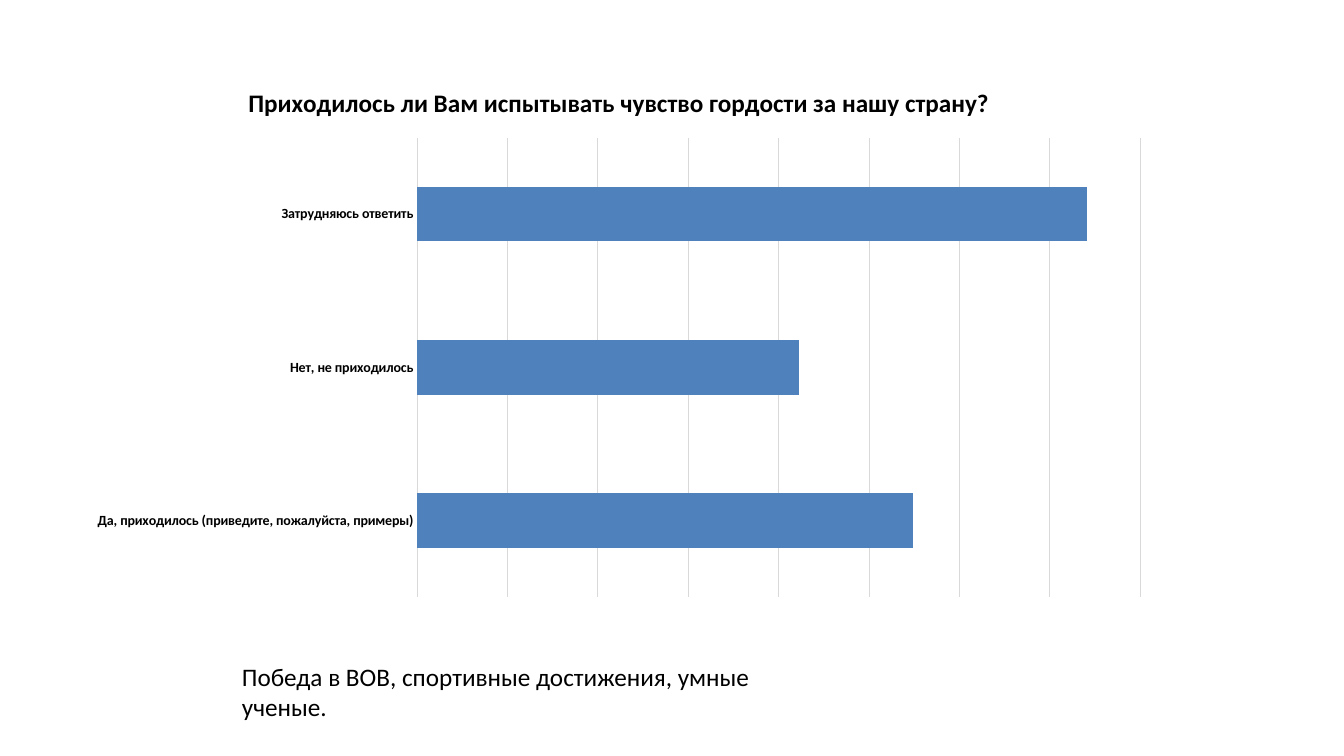
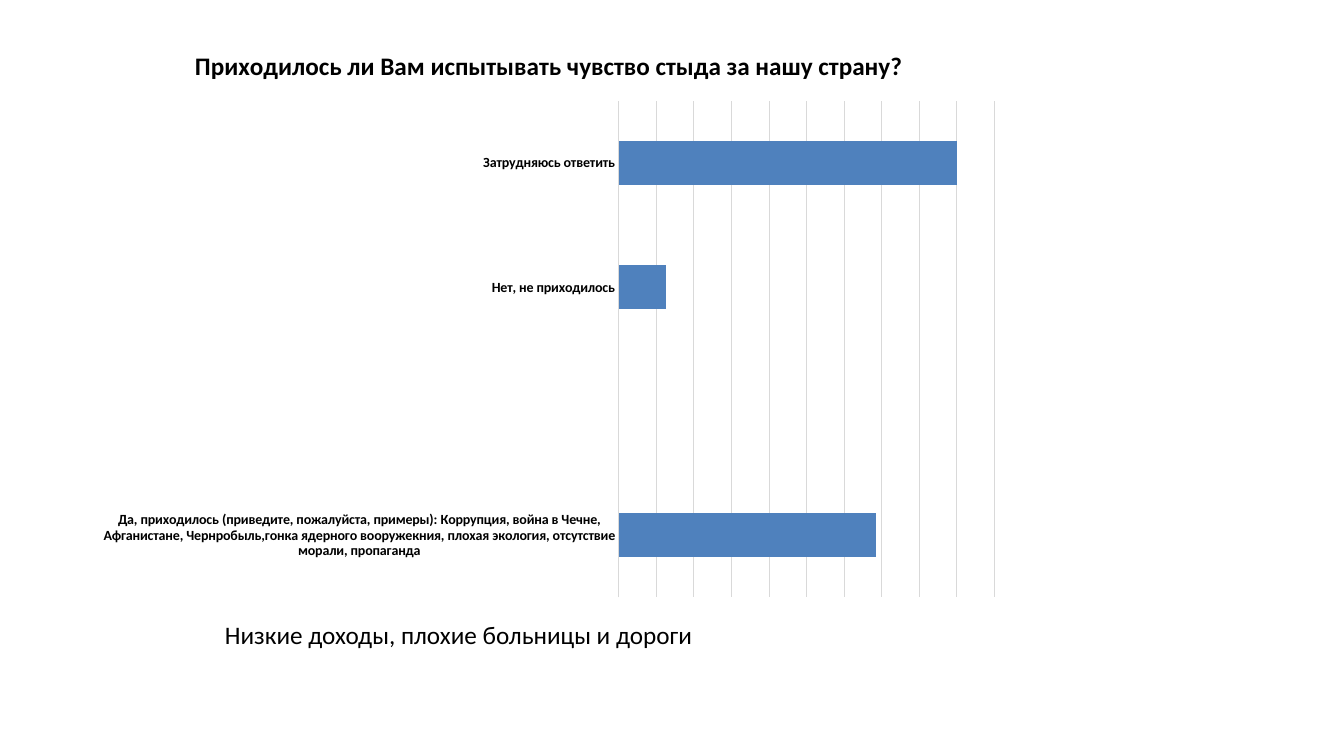
from dataclasses import dataclass

import pptx
import pptx.chart.data
import pptx.dml.color
import pptx.enum.chart
import pptx.enum.text
import pptx.util

EMU_PER_PX = 914400 / 100.8
FONT = "Calibri"
COLORS = {"text": "000000", "bar": "4F81BD", "grid": "D9D9D9"}


@dataclass(frozen=True)
class Box:
    left: int
    top: int
    width: int
    height: int

    def emu(self) -> tuple:
        return tuple(px(n) for n in (self.left, self.top, self.width, self.height))


@dataclass(frozen=True)
class Question:
    title: str
    answers: tuple
    axis_max: float
    axis_step: float
    chart_box: Box
    comment: str
    comment_box: Box


QUESTIONS = (
    Question(
        title="Приходилось ли Вам испытывать чувство гордости за нашу страну?",
        answers=(
            ("Да, приходилось (приведите, пожалуйста, примеры)", 74),
            ("Нет, не приходилось", 57),
            ("Затрудняюсь ответить", 100),
        ),
        axis_max=108,
        axis_step=13.5,
        chart_box=Box(76, 65, 1086, 543),
        comment="Победа в ВОВ, спортивные достижения, умные ученые.",
        comment_box=Box(232, 656, 602, 72),
    ),
    Question(
        title="Приходилось ли Вам испытывать чувство стыда за нашу страну?",
        answers=(
            ("Да, приходилось (приведите, пожалуйста, примеры): Коррупция, "
             "война в Чечне, Афганистане, Чернробыль,гонка ядерного "
             "вооружекния, плохая экология, отсутствие морали, пропаганда", 76),
            ("", None),
            ("Нет, не приходилось", 14),
            ("Затрудняюсь ответить", 100),
        ),
        axis_max=111.1,
        axis_step=11.11,
        chart_box=Box(85, 27, 928, 582),
        comment="Низкие доходы, плохие больницы и дороги",
        comment_box=Box(215, 614, 661, 40),
    ),
)


def px(length: int) -> int:
    return round(length * EMU_PER_PX)


def rgb(name: str) -> pptx.dml.color.RGBColor:
    return pptx.dml.color.RGBColor.from_string(COLORS[name])


def style_font(font, size: int, bold: bool = False) -> None:
    font.name = FONT
    font.size = pptx.util.Pt(size)
    font.bold = bold
    font.color.rgb = rgb("text")


def write_text(frame, text: str, *, size: int = 18, bold: bool = False) -> None:
    run = frame.paragraphs[0].add_run()
    run.text = text
    style_font(run.font, size, bold)


def style_line(line) -> None:
    line.color.rgb = rgb("grid")
    line.width = pptx.util.Pt(0.75)


def add_answers_chart(slide, question: Question) -> None:
    labels, shares = zip(*question.answers)
    answers = pptx.chart.data.CategoryChartData()
    answers.categories = labels
    answers.add_series("Series 1", shares)
    chart = slide.shapes.add_chart(
        pptx.enum.chart.XL_CHART_TYPE.BAR_CLUSTERED, *question.chart_box.emu(), answers
    ).chart
    style_font(chart.font, 10)
    chart.has_legend = False
    chart.has_title = True
    chart.chart_title.include_in_layout = False
    write_text(chart.chart_title.text_frame, question.title, bold=True)

    bars = chart.plots[0]
    bars.gap_width = 182
    bars.vary_by_categories = False
    bars.series[0].format.fill.solid()
    bars.series[0].format.fill.fore_color.rgb = rgb("bar")

    answer_axis = chart.category_axis
    answer_axis.major_tick_mark = pptx.enum.chart.XL_TICK_MARK.NONE
    style_font(answer_axis.tick_labels.font, 10, bold=True)
    style_line(answer_axis.format.line)

    share_axis = chart.value_axis
    share_axis.visible = False
    share_axis.minimum_scale = 0
    share_axis.maximum_scale = question.axis_max
    share_axis.major_unit = question.axis_step
    share_axis.has_major_gridlines = True
    style_line(share_axis.major_gridlines.format.line)


def add_comment(slide, question: Question) -> None:
    frame = slide.shapes.add_textbox(*question.comment_box.emu()).text_frame
    frame.word_wrap = True
    frame.auto_size = pptx.enum.text.MSO_AUTO_SIZE.SHAPE_TO_FIT_TEXT
    write_text(frame, question.comment)


def main() -> None:
    deck = pptx.Presentation()
    deck.slide_width, deck.slide_height = px(1344), px(756)
    for question in QUESTIONS:
        slide = deck.slides.add_slide(deck.slide_layouts[6])
        add_answers_chart(slide, question)
        add_comment(slide, question)
    deck.save("out.pptx")


if __name__ == "__main__":
    main()
